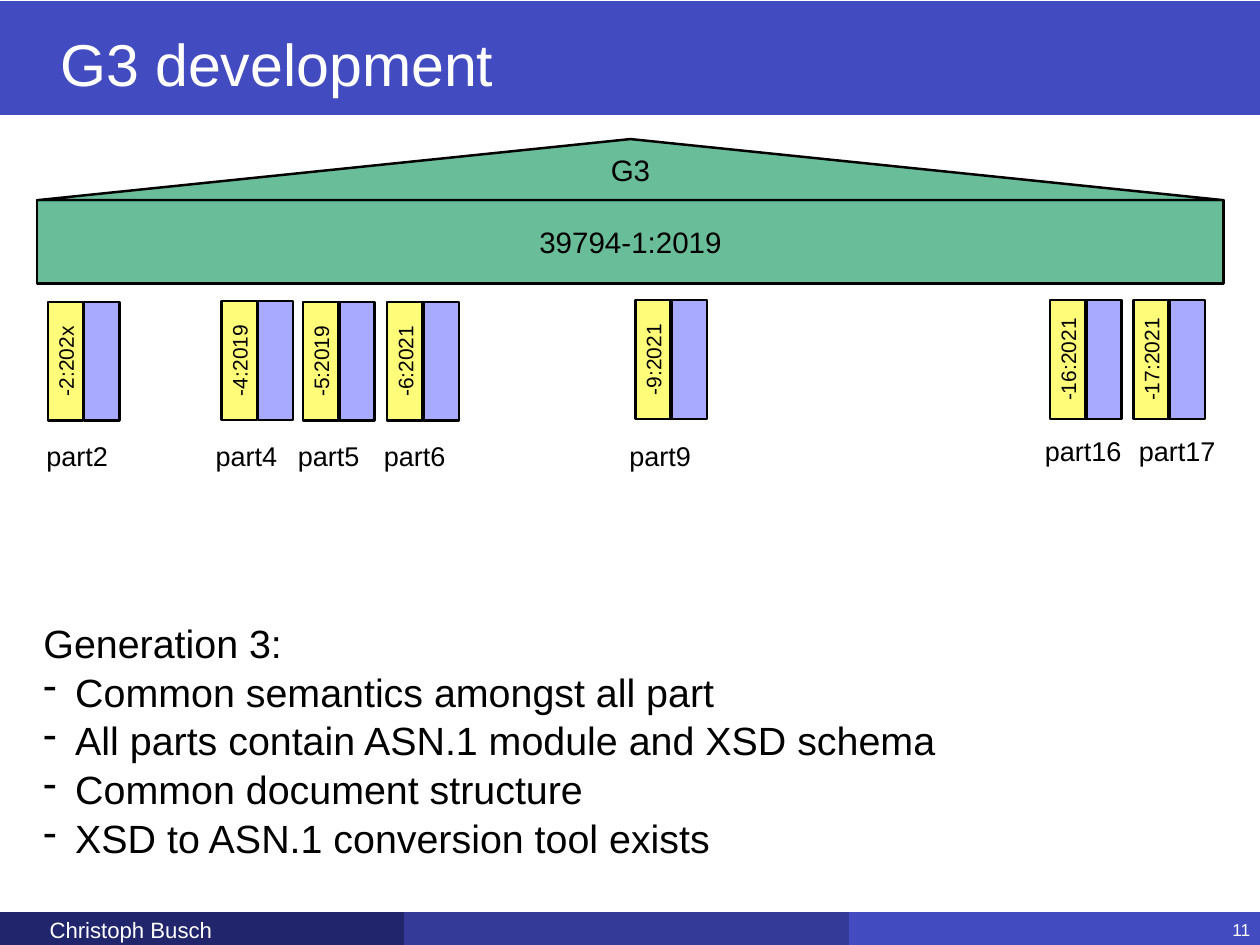
import pptx
import pptx.util
import pptx.dml.color
import pptx.enum.shapes
import pptx.enum.text
import pptx.oxml
import pptx.oxml.ns

Inches = pptx.util.Inches
Pt = pptx.util.Pt
RGBColor = pptx.dml.color.RGBColor
ALIGN = pptx.enum.text.PP_ALIGN
ANCHOR = pptx.enum.text.MSO_ANCHOR
RECT = pptx.enum.shapes.MSO_SHAPE.RECTANGLE

WHITE = RGBColor(0xFF, 0xFF, 0xFF)
BLACK = RGBColor(0, 0, 0)
BLUE = RGBColor(0x43, 0x4B, 0xC1)
NAVY = RGBColor(0x21, 0x26, 0x6C)
INDIGO = RGBColor(0x33, 0x3A, 0x98)
GREEN = RGBColor(0x00, 0x90, 0x51)
YELLOW = RGBColor(0xFF, 0xFC, 0x79)
LILAC = RGBColor(0xA8, 0xAA, 0xFF)

PARTS = [
    ("part2", "-2:202x", 0.54, 3.41, 0.46, 4.92),
    ("part4", "-4:2019", 2.5, 3.4, 2.37, 4.92),
    ("part5", "-5:2019", 3.42, 3.41, 3.3, 4.92),
    ("part6", "-6:2021", 4.37, 3.41, 4.27, 4.92),
    ("part9", "-9:2021", 7.17, 3.39, 7.04, 4.92),
    ("part16", "-16:2021", 11.85, 3.39, 11.73, 4.86),
    ("part17", "-17:2021", 12.79, 3.39, 12.79, 4.86),
]
BENEFITS = [
    "Common semantics amongst all part",
    "All parts contain ASN.1 module and XSD schema",
    "Common document structure",
    "XSD to ASN.1 conversion tool exists",
]


def write(sp, lines, size, color=BLACK, align=ALIGN.LEFT, anchor=ANCHOR.TOP, wrap=True):
    """Put lines of text in a shape and return its paragraphs."""
    tf = sp.text_frame
    frame = {"word_wrap": wrap, "vertical_anchor": anchor}
    frame.update({f"margin_{side}": Inches(0.06) for side in ("left", "right", "top", "bottom")})
    for name, value in frame.items():
        setattr(tf, name, value)
    tf.text = "\n".join(lines)
    for p in tf.paragraphs:
        p.alignment = align
        for name, value in {"name": "Arial", "size": Pt(size)}.items():
            setattr(p.font, name, value)
        p.font.color.rgb = color
    return tf.paragraphs


def add_text(shapes, box, lines, size, **style):
    """Add a text box at a box given in inches."""
    return write(shapes.add_textbox(*map(Inches, box)), lines, size, **style)


def paint(sp, fill, line=BLACK, width=2, alpha=None):
    """Set the fill, outline and transparency of a shape."""
    sp.shadow.inherit = False
    sp.fill.solid()
    sp.fill.fore_color.rgb = fill
    sp.line.color.rgb = line
    sp.line.width = Pt(width)
    if alpha:
        color = sp.fill._xPr.find(".//" + pptx.oxml.ns.qn("a:srgbClr"))
        color.append(pptx.oxml.parse_xml(
            f'<a:alpha {pptx.oxml.ns.nsdecls("a")} val="{alpha * 1000}"/>'))


def add_rect(shapes, box, fill, **style):
    """Add a painted rectangle at a box given in inches."""
    sp = shapes.add_shape(RECT, *map(Inches, box))
    paint(sp, fill, **style)
    return sp


def add_header(s, x, y, w, h):
    """Draw the title band."""
    add_rect(s.shapes, (x, y, w, h), BLUE, line=WHITE, width=1)
    add_text(s.shapes, (x + 0.65, y + 0.31, 12.97, 0.86), ["G3 development"], 48,
             color=WHITE, anchor=ANCHOR.BOTTOM)


def add_footer(s, x, y, h):
    """Draw the three footer bands, the author and the page number."""
    bands = s.shapes.add_group_shape().shapes
    for dx, w, color in ((9.7, 4.7, BLUE), (0, 4.7, NAVY), (4.69, 5.01, INDIGO)):
        add_rect(bands, (x + dx, y, w, h), color, line=color, width=1)
    author = add_text(s.shapes, (x + 0.58, y - 0.02, 2.43, 0.39), ["Christoph Busch"], 18,
                      color=WHITE)
    author[0]._p.get_or_add_pPr().set("marL", str(Inches(0.04)))
    add_text(s.shapes, (x + 13.95, y + 0.01, 0.34, 0.33), ["11"], 14,
             color=WHITE, align=ALIGN.RIGHT, wrap=False)


def add_roof(s, x, y, w, gable, beam):
    """Draw the gable and the beam that span all parts."""
    base = y + gable
    fb = s.shapes.build_freeform(Inches(x), Inches(base))
    fb.add_line_segments([(Inches(x + w), Inches(base)), (Inches(x + w / 2), Inches(y))])
    sp = fb.convert_to_shape()
    paint(sp, GREEN, alpha=59)
    bar = add_rect(s.shapes, (x, base, w, beam), GREEN, alpha=59)
    for shape, text in ((sp, "G3"), (bar, "39794-1:2019")):
        write(shape, [text], 24, align=ALIGN.CENTER, anchor=ANCHOR.MIDDLE)


def add_pillar(s, edition, x, y, w=0.4, h=1.34):
    """Draw a pair of upright bars, the first with its edition."""
    bars = s.shapes.add_group_shape().shapes
    left, top = x + (w - h) / 2, y + (h - w) / 2
    for dx, fill, lines in ((0, YELLOW, [edition]), (0.41, LILAC, [])):
        sp = add_rect(bars, (left + dx, top, h, w), fill)
        sp.rotation = 270
        if lines:
            write(sp, lines, 17, align=ALIGN.CENTER, anchor=ANCHOR.MIDDLE)


def add_benefits(s, x, y, w, h):
    """Write the heading and the dashed list."""
    paragraphs = add_text(s.shapes, (x, y, w, h), ["Generation 3:"] + BENEFITS, 32,
                          anchor=ANCHOR.BOTTOM)
    for p in paragraphs[1:]:
        p.space_before = Pt(1.4)
        pPr = p._p.get_or_add_pPr()
        pPr.set("marL", str(Inches(0.36)))
        pPr.set("indent", str(Inches(-0.36)))
        bullet = pptx.oxml.parse_xml(f'<a:buChar {pptx.oxml.ns.nsdecls("a")} char="-"/>')
        pPr.insert_element_before(bullet, "a:tabLst", "a:defRPr", "a:extLst")


def main():
    """Build the slide and save it."""
    prs = pptx.Presentation()
    prs.slide_width, prs.slide_height = Inches(14.22), Inches(10.67)
    s = prs.slides.add_slide(prs.slide_layouts[6])
    add_header(s, -0.03, 0, 14.26, 1.31)
    add_footer(s, -0.12, 10.31, 0.36)
    add_roof(s, 0.42, 1.57, 13.39, 0.69, 0.94)
    add_benefits(s, 0.43, 5.6, 13.6, 4.19)
    for label, edition, x, y, label_x, label_y in PARTS:
        add_pillar(s, edition, x, y)
        label_w = 0.82 if len(label) == 5 else 0.99
        add_text(s.shapes, (label_x, label_y, label_w, 0.46), [label], 22,
                 align=ALIGN.CENTER, anchor=ANCHOR.MIDDLE, wrap=False)
    prs.save("out.pptx")


if __name__ == "__main__":
    main()
